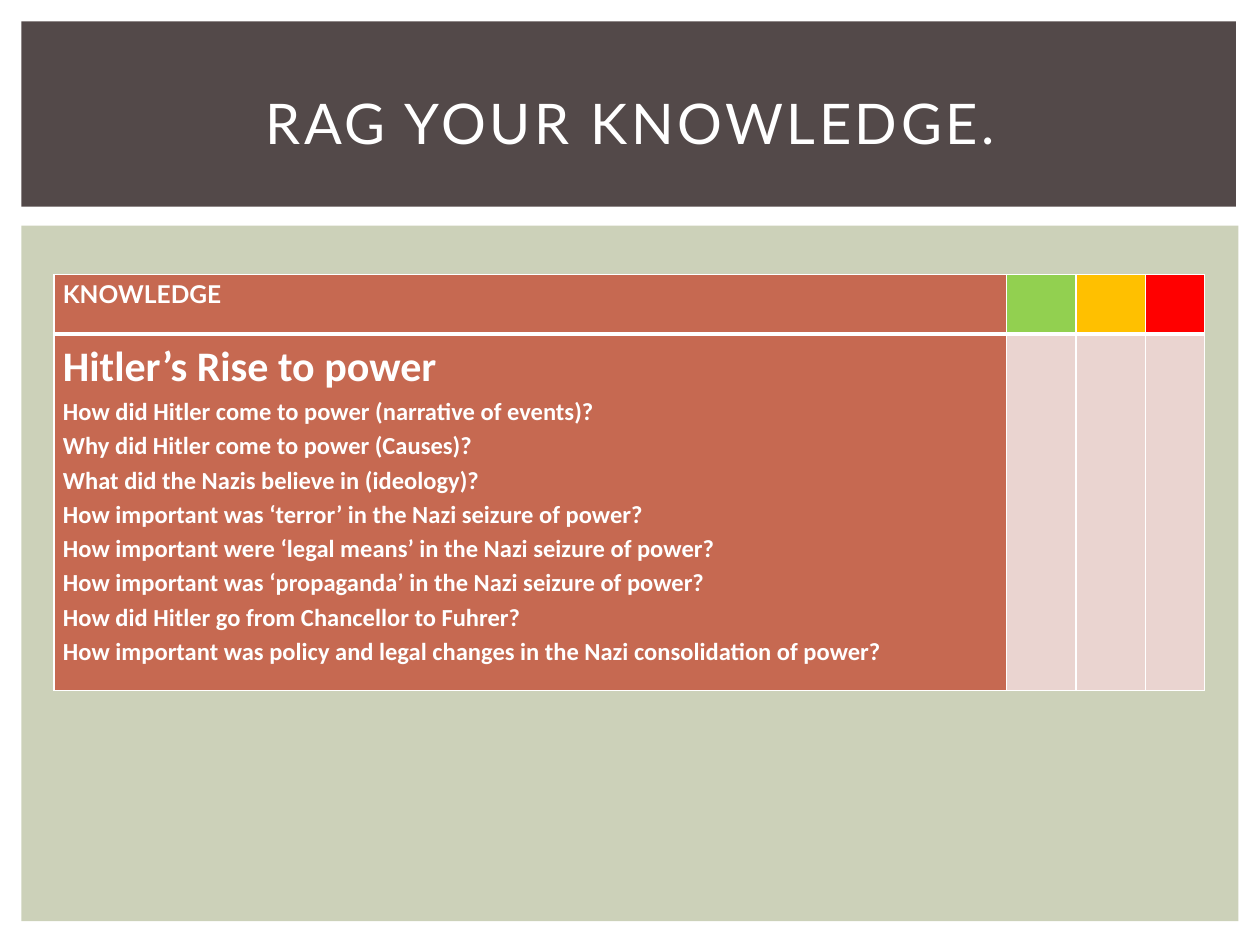
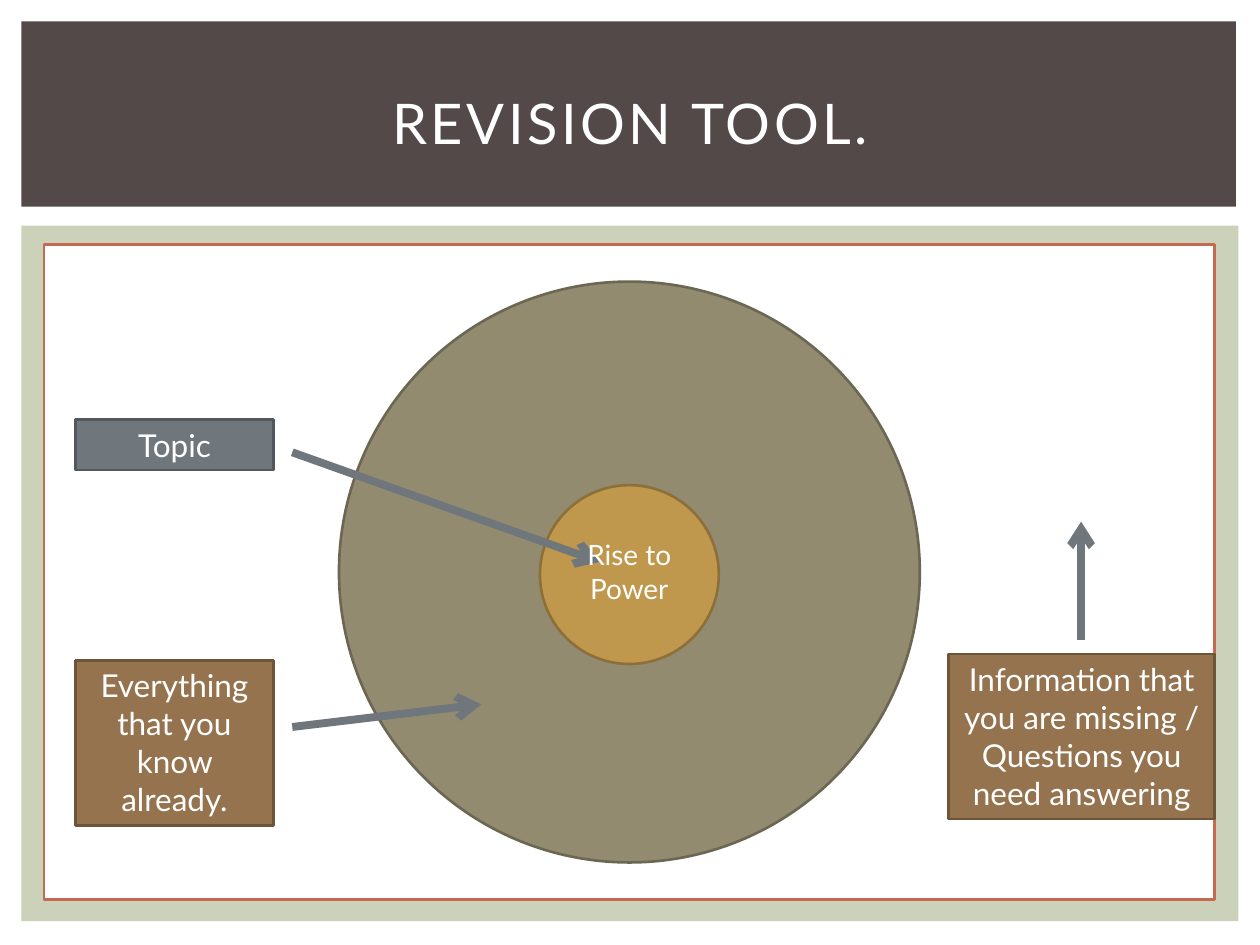
from dataclasses import dataclass

from lxml.etree import SubElement
from pptx import Presentation
from pptx.dml.color import RGBColor
from pptx.enum.shapes import MSO_CONNECTOR as Link, MSO_SHAPE as Kind
from pptx.enum.text import MSO_ANCHOR as Anchor, PP_ALIGN as Align
from pptx.oxml.ns import qn
from pptx.util import Inches, Pt

COLOURS = {
    "white": "FFFFFF", "band": "534949", "panel": "CCD1B9",
    "rust": "C66951", "blush": "EAD4D0",
    "green": "92D050", "amber": "FFC000", "red": "FF0000",
    "olive": "928B70", "olive edge": "6C6753",
    "gold": "BF974D", "gold edge": "8D7039",
    "slate": "6F777D", "slate edge": "52585C",
    "brown": "94734E", "brown edge": "6D553A",
}
TITLE_FONT, TABLE_FONT = "Lato", "Calibri"
COLUMNS, ROWS = 100, 75  # square grid cells, a tenth of an inch each

QUESTIONS = [
    "How did Hitler come to power (narrative of events)?",
    "Why did Hitler come to power (Causes)?",
    "What did the Nazis believe in (ideology)?",
    "How important was ‘terror’ in the Nazi seizure of power?",
    "How important were ‘legal means’ in the Nazi seizure of power?",
    "How important was ‘propaganda’ in the Nazi seizure of power?",
    "How did Hitler go from Chancellor to Fuhrer?",
    "How important was policy and legal changes in the Nazi consolidation of power?",
]


def grid(cells):
    return Inches(cells / 10)


def colour(name):
    return RGBColor.from_string(COLOURS[name])


@dataclass
class Box:
    left: float
    top: float
    width: float
    height: float

    def inside(self, left, top, width, height):
        return Box(self.left + left, self.top + top, width, height)

    def centred(self, width, height, drop=0):
        return self.inside((self.width - width) / 2,
                           (self.height - height) / 2 + drop, width, height)

    def point(self, column, row):
        return grid(self.left + column), grid(self.top + row)

    def lengths(self):
        return [grid(n) for n in (self.left, self.top, self.width, self.height)]


BAND = Box(1.7, 1.7, 96.4, 14.7)
PANEL = Box(1.7, 17.9, 96.6, 55.2)


def add_block(page, box, fill, edge=None, kind=Kind.RECTANGLE):
    block = page.shapes.add_shape(kind, *box.lengths())
    block.shadow.inherit = False
    block.fill.solid()
    block.fill.fore_color.rgb = colour(fill)
    if edge:
        block.line.color.rgb = colour(edge)
        block.line.width = Pt(1.5)
    else:
        block.line.fill.background()
    return block


def style(para, size, font=TITLE_FONT, bold=False):
    para.font.size = Pt(size)
    para.font.name = font
    para.font.bold = bold
    para.font.color.rgb = colour("white")


def write(shape, text, size, anchor=Anchor.TOP):
    frame = shape.text_frame
    frame.word_wrap = True
    frame.vertical_anchor = anchor
    para = frame.paragraphs[0]
    para.alignment = Align.CENTER
    style(para, size)
    span = para.add_run()
    span.text = text
    return span


def add_text(page, box, text, size, anchor=Anchor.TOP):
    return write(page.shapes.add_textbox(*box.lengths()), text, size, anchor)


def add_arrow(page, box, start, end):
    arrow = page.shapes.add_connector(Link.STRAIGHT, *box.point(*start), *box.point(*end))
    arrow.line.color.rgb = colour("slate")
    arrow.line.width = Pt(4.5)
    SubElement(arrow.line._get_or_add_ln(), qn("a:tailEnd"), type="arrow")
    SubElement(arrow._element.spPr, qn("a:effectLst"))


def add_page(deck, title):
    """Blank page with the shared panel, band and spaced title."""
    page = deck.slides.add_slide(deck.slide_layouts[6])
    add_block(page, PANEL, "panel")
    add_block(page, BAND, "band")
    span = add_text(page, BAND.inside(2.5, 2.2, 91.7, 11.5), title, 32, Anchor.MIDDLE)
    span._r.get_or_add_rPr().set("spc", "200")
    return page


def style_cell(cell, fill, top, bottom):
    """Borders come before the fill in the cell's properties."""
    props = cell._tc.get_or_add_tcPr()
    for side, width in (("L", 1), ("R", 1), ("T", top), ("B", bottom)):
        line = SubElement(props, qn(f"a:ln{side}"), w=str(Pt(width)))
        paint = SubElement(line, qn("a:solidFill"))
        SubElement(paint, qn("a:srgbClr"), val=COLOURS["white"])
    cell.fill.solid()
    cell.fill.fore_color.rgb = colour(fill)


def fill_cell(cell, lines):
    cell.margin_left = cell.margin_right = Inches(0.07)
    cell.margin_top = cell.margin_bottom = 0
    frame = cell.text_frame
    for number, (text, size, font) in enumerate(lines):
        para = frame.add_paragraph() if number else frame.paragraphs[0]
        para.line_spacing = 1.15
        style(para, size, font, bold=True)
        para.add_run().text = text


def add_knowledge_table(page, box):
    widths, heights = [75.6, 5.5, 5.5, 4.7], [4.7, 28.3]
    fills = [["rust", "green", "amber", "red"], ["rust"] + ["blush"] * 3]
    table = page.shapes.add_table(len(heights), len(widths), *box.lengths()).table
    for column, width in zip(table.columns, widths):
        column.width = grid(width)
    for row, height in zip(table.rows, heights):
        row.height = grid(height)

    # A thick rule parts the header from the body
    for row, (names, edges) in enumerate(zip(fills, [(1, 3), (3, 1)])):
        for column, name in enumerate(names):
            style_cell(table.cell(row, column), name, *edges)

    fill_cell(table.cell(0, 0), [("KNOWLEDGE", 14, TITLE_FONT)])
    fill_cell(table.cell(1, 0), [("Hitler’s Rise to power", 24, TABLE_FONT)]
              + [(question, 14, TABLE_FONT) for question in QUESTIONS])


def add_revision_target(page, box):
    add_block(page, box, "white", "rust")

    # Rings of knowledge around the topic
    add_block(page, box.centred(46.1, 46.1), "olive", "olive edge", Kind.OVAL)
    add_block(page, box.centred(14.2, 14.2, drop=0.2), "gold", "gold edge", Kind.OVAL)

    # Arrows from the labels to their zones
    for start, end in [((19.7, 16.5), (44.1, 25.2)),
                       ((19.7, 38.3), (34.7, 36.5)),
                       ((82.3, 31.4), (82.3, 22))]:
        add_arrow(page, box, start, end)

    # Labels
    for text, fill, place in [
        ("Everything that you know already.", "brown", (2.5, 33, 15.7, 13.1)),
        ("Topic", "slate", (2.5, 13.9, 15.7, 4)),
        ("Information that you are missing / Questions you need answering",
         "brown", (71.8, 32.5, 21.1, 13.1)),
    ]:
        write(add_block(page, box.inside(*place), fill, f"{fill} edge"), text, 18)
    add_text(page, box.centred(12.6, 6.4), "Rise to Power", 16)


def main():
    deck = Presentation()
    deck.slide_width, deck.slide_height = grid(COLUMNS), grid(ROWS)
    add_knowledge_table(add_page(deck, "RAG YOUR KNOWLEDGE."),
                        PANEL.inside(2.6, 3.9, 91.3, 33))
    add_revision_target(add_page(deck, "REVISION TOOL."),
                        PANEL.inside(1.8, 1.5, 92.9, 52))
    deck.save("out.pptx")


if __name__ == "__main__":
    main()
